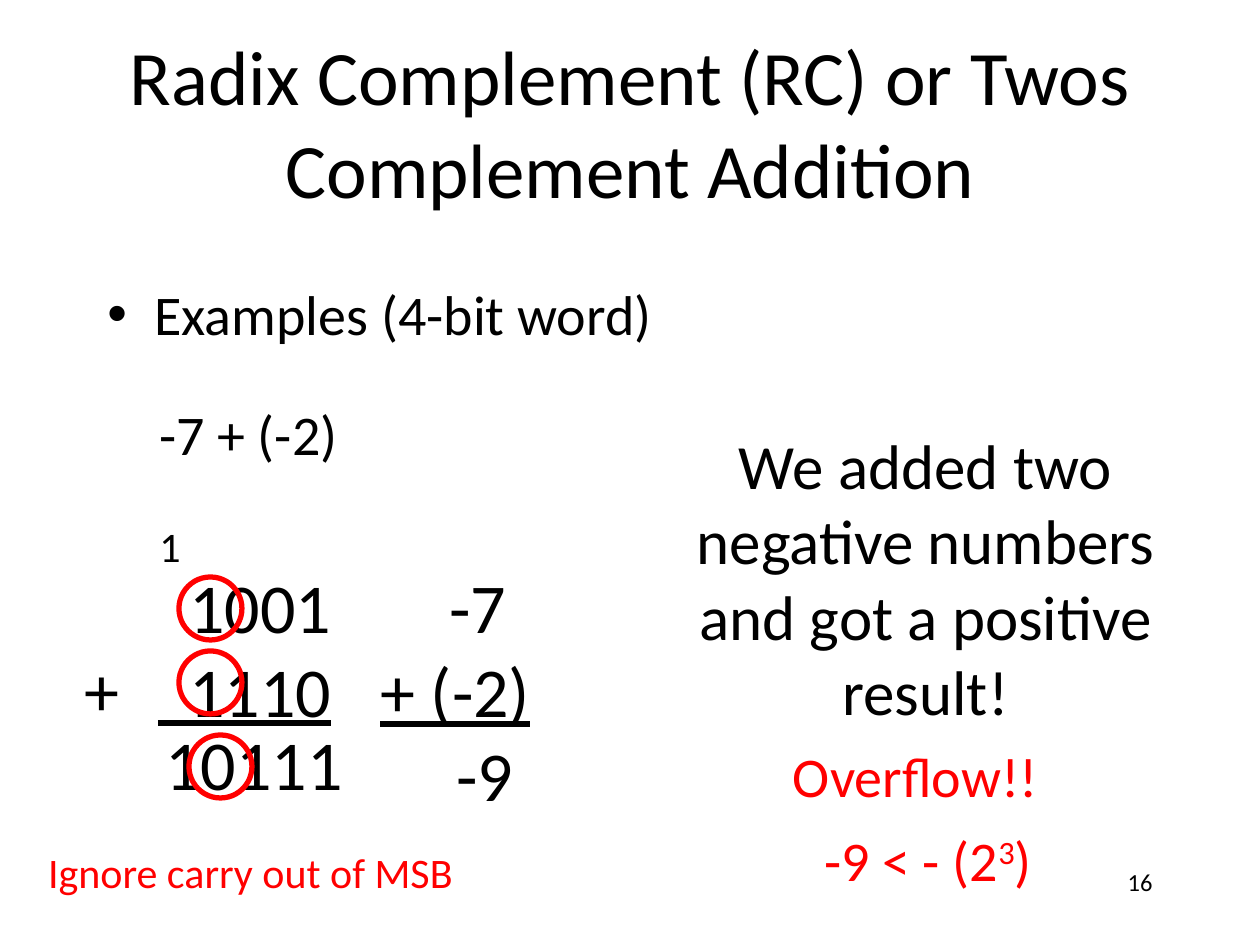
from lxml import etree
from pptx import Presentation
from pptx.dml.color import RGBColor
from pptx.enum.shapes import MSO_CONNECTOR, MSO_SHAPE
from pptx.enum.text import MSO_ANCHOR, PP_ALIGN
from pptx.oxml.ns import qn
from pptx.util import Pt

LEFT, MID, RIGHT = PP_ALIGN.LEFT, PP_ALIGN.CENTER, PP_ALIGN.RIGHT
TOP, CENTER = MSO_ANCHOR.TOP, MSO_ANCHOR.MIDDLE
OVAL, LINE = MSO_SHAPE.OVAL, MSO_CONNECTOR.STRAIGHT
SCALE = 914400 / 126
INK = {"black": "000000", "red": "FF0000"}
FONT = "Calibri"


def px(n):
    return round(n * SCALE)


class Page:
    def __init__(self, wide, high):
        self.deck = Presentation()
        self.deck.slide_width, self.deck.slide_height = px(wide), px(high)
        self.slide = self.deck.slides.add_slide(self.deck.slide_layouts[6])
        self.shapes = self.slide.shapes

    def text(self, box, lines, size, ink="black", align=LEFT, wrap=True, anchor=TOP):
        """Add a text box; each line is a string or a (string, format) pair."""
        frame = self.shapes.add_textbox(*map(px, box)).text_frame
        for name, value in {"word_wrap": wrap, "vertical_anchor": anchor}.items():
            setattr(frame, name, value)
        for i, line in enumerate(lines):
            words, form = line if isinstance(line, tuple) else (line, {})
            para = frame.paragraphs[0] if i == 0 else frame.add_paragraph()
            para.alignment = align
            self.indent(para, form)
            self.run(para, words, size, ink, form.get("under", False))
        return frame

    def indent(self, para, form):
        prop = para._p.get_or_add_pPr()
        if "left" in form:
            prop.set("marL", str(px(form["left"])))
        if "bullet" in form:
            prop.set("indent", str(-px(form["left"])))
            etree.SubElement(prop, qn("a:buFont")).set("typeface", "Arial")
            etree.SubElement(prop, qn("a:buChar")).set("char", form["bullet"])

    def run(self, para, words, size, ink, under=False):
        run = para.add_run()
        run.text = words
        look = {"name": FONT, "size": Pt(size), "underline": under}
        for name, value in look.items():
            setattr(run.font, name, value)
        run.font.color.rgb = RGBColor.from_string(INK[ink])
        return run

    def power(self, para, words, size, ink):
        run = self.run(para, words, size, ink)
        run._r.get_or_add_rPr().set("baseline", "30000")

    def ring(self, x, y, size=63):
        ring = self.shapes.add_shape(OVAL, *map(px, (x, y, size, size)))
        ring.shadow.inherit = False
        ring.fill.background()
        self.stroke(ring.line, "red", 3)

    def rule(self, x, y, wide):
        """Draw the sum line under a column of digits."""
        rule = self.shapes.add_connector(LINE, *map(px, (x, y, x + wide, y)))
        etree.SubElement(rule._element.spPr, qn("a:effectLst"))
        self.stroke(rule.line, "black", 3.5)

    def stroke(self, line, ink, width):
        line.color.rgb = RGBColor.from_string(INK[ink])
        line.width = Pt(width)


def main():
    page = Page(1260, 945)
    page.text((95, 42, 1071, 158),
              ["Radix Complement (RC) or Twos Complement Addition"],
              44, align=MID, anchor=CENTER)
    page.text((95, 273, 1071, 567),
              [("Examples (4-bit word)", {"left": 47, "bullet": "•"})], 32)
    page.text((30, 840, 441, 63), ["Ignore carry out of MSB"], 24, "red", MID, False)
    page.text((146, 393, 205, 81), ["-7 + (-2)"], 32, align=MID, wrap=False)

    # Decimal sum
    page.text((368, 557, 184, 267),
              [("-7", {"left": 69}), ("+ (-2)", {"under": True}), ("-9", {"left": 76})],
              40)

    # Binary sum
    page.text((145, 557, 204, 237), [(bits, {"left": 32}) for bits in ("1001", "1110")], 40)
    page.rule(158, 723, 173)
    page.text((72, 640, 60, 97), ["+"], 40)
    page.text((103, 714, 252, 97), ["10111"], 40, align=RIGHT)
    page.text((147, 514, 47, 64), ["1"], 24)

    # Verdict
    limit = page.text((809, 819, 238, 81), ["-9 < - (2"], 32, "red", MID, False)
    para = limit.paragraphs[0]
    page.power(para, "3", 32, "red")
    page.run(para, ")", 32, "red")
    page.text((640, 420, 571, 315),
              ["We added two negative numbers and got a positive result!"],
              36, align=MID)
    for x, y in ((189, 735), (179, 651), (179, 577)):
        page.ring(x, y)
    page.text((777, 735, 277, 79), ["Overflow!!"], 32, "red", MID, False)
    page.text((903, 861, 262, 63), ["16"], 14, align=RIGHT)
    page.deck.save("out.pptx")


if __name__ == "__main__":
    main()
